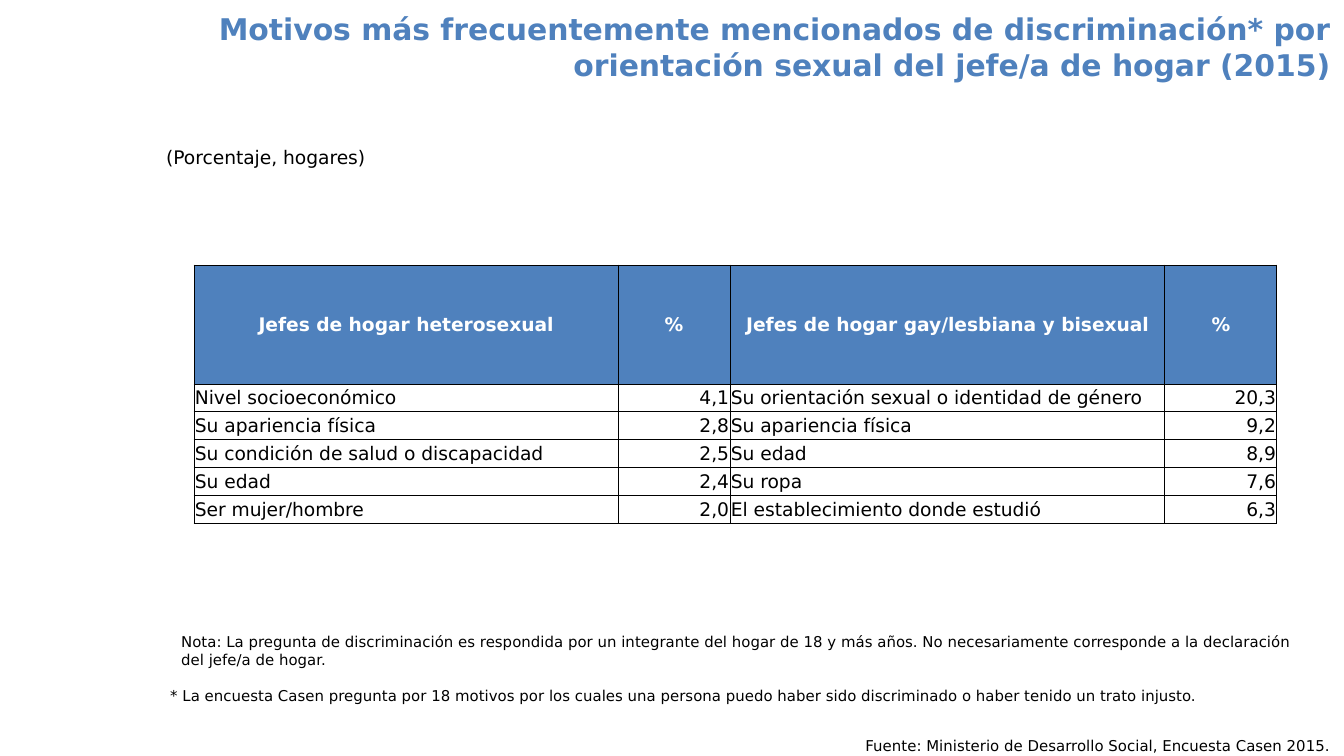
from lxml import etree
from pptx import Presentation
from pptx.dml.color import RGBColor
from pptx.enum.shapes import MSO_SHAPE
from pptx.enum.text import MSO_ANCHOR, PP_ALIGN
from pptx.oxml.ns import qn
from pptx.util import Pt

LEFT, CENTER, RIGHT = PP_ALIGN.LEFT, PP_ALIGN.CENTER, PP_ALIGN.RIGHT
TOP, MIDDLE = MSO_ANCHOR.TOP, MSO_ANCHOR.MIDDLE
RECTANGLE = MSO_SHAPE.RECTANGLE
FONT = "DejaVu Sans"
COLORS = {"accent": "4F81BD", "white": "FFFFFF", "black": "000000"}
BORDER = Pt(0.5)

TITLE = ("Motivos más frecuentemente mencionados de discriminación* por "
         "orientación sexual del jefe/a de hogar (2015)")
SOURCE = "Fuente: Ministerio de Desarrollo Social, Encuesta Casen 2015."
ASTERISK = ("* La encuesta Casen pregunta por 18 motivos por los cuales una persona "
            "puedo haber sido discriminado o haber tenido un trato injusto.")
UNIT = "(Porcentaje, hogares)"
NOTE = ("Nota: La pregunta de discriminación es respondida por un integrante del hogar "
        "de 18 y más años. No necesariamente corresponde a la declaración del jefe/a de hogar.")

TEXTS = [
    (TITLE, (148, 4, 1196, 122), 16, "accent", True, RIGHT, None),
    (SOURCE, (645, 730, 699, 23), 8, "black", False, RIGHT, "white"),
    (ASTERISK, (157, 680, 1120, 32), 8, "black", False, LEFT, None),
    (UNIT, (153, 139, 234, 36), 10, "black", False, LEFT, None),
    (NOTE, (168, 626, 1144, 50), 8, "black", False, LEFT, None),
]

HEADER = ("Jefes de hogar heterosexual", "%", "Jefes de hogar gay/lesbiana y bisexual", "%")
REASONS = [
    ("Nivel socioeconómico", "4,1", "Su orientación sexual o identidad de género", "20,3"),
    ("Su apariencia física", "2,8", "Su apariencia física", "9,2"),
    ("Su condición de salud o discapacidad", "2,5", "Su edad", "8,9"),
    ("Su edad", "2,4", "Su ropa", "7,6"),
    ("Ser mujer/hombre", "2,0", "El establecimiento donde estudió", "6,3"),
]
TABLE_LEFT, TABLE_TOP = 194, 265
COLUMN_WIDTHS = (424, 112, 435, 112)
ROW_HEIGHTS = (119,) + (28,) * len(REASONS)


def px(length):
    return round(length * 914400 / 134.4)


def rgb(name):
    return RGBColor.from_string(COLORS[name])


def write(frame, text, size, color, bold, align):
    paragraph = frame.paragraphs[0]
    paragraph.text = text
    paragraph.alignment = align
    font = paragraph.font
    font.name, font.size, font.bold = FONT, Pt(size), bold
    font.color.rgb = rgb(color)


def add_text(slide, text, box, size, color, bold, align, fill):
    place = [px(length) for length in box]
    if fill:
        holder = slide.shapes.add_shape(RECTANGLE, *place)
        holder.shadow.inherit = False
        holder.fill.solid()
        holder.fill.fore_color.rgb = rgb(fill)
        holder.line.fill.background()
    else:
        holder = slide.shapes.add_textbox(*place)
    frame = holder.text_frame
    frame.word_wrap = True
    frame.vertical_anchor = TOP
    write(frame, text, size, color, bold, align)


def add_borders(cell):
    properties = cell._tc.get_or_add_tcPr()
    for index, side in enumerate(("a:lnL", "a:lnR", "a:lnT", "a:lnB")):
        line = etree.Element(qn(side), w=str(BORDER))
        fill = etree.SubElement(line, qn("a:solidFill"))
        etree.SubElement(fill, qn("a:srgbClr"), val=COLORS["black"])
        properties.insert(index, line)


def add_reasons_table(slide):
    rows = [HEADER] + REASONS
    table = slide.shapes.add_table(
        len(rows), len(HEADER), px(TABLE_LEFT), px(TABLE_TOP),
        px(sum(COLUMN_WIDTHS)), px(sum(ROW_HEIGHTS))).table
    table.horz_banding = False
    for column, width in zip(table.columns, COLUMN_WIDTHS):
        column.width = px(width)
    for row, height in zip(table.rows, ROW_HEIGHTS):
        row.height = px(height)
    for r, values in enumerate(rows):
        for c, value in enumerate(values):
            cell = table.cell(r, c)
            is_header = r == 0
            cell.margin_left = cell.margin_right = cell.margin_top = px(1)
            cell.margin_bottom = 0
            cell.vertical_anchor = MIDDLE
            if is_header:
                cell.fill.solid()
                cell.fill.fore_color.rgb = rgb("accent")
            else:
                cell.fill.background()
            align = CENTER if is_header else RIGHT if c % 2 else LEFT
            write(cell.text_frame, value, 10, "white" if is_header else "black", is_header, align)
            add_borders(cell)


def main():
    deck = Presentation()
    deck.slide_width, deck.slide_height = px(1344), px(756)
    slide = deck.slides.add_slide(deck.slide_layouts[6])
    for item in TEXTS:
        add_text(slide, *item)
    add_reasons_table(slide)
    deck.save("out.pptx")


if __name__ == "__main__":
    main()
